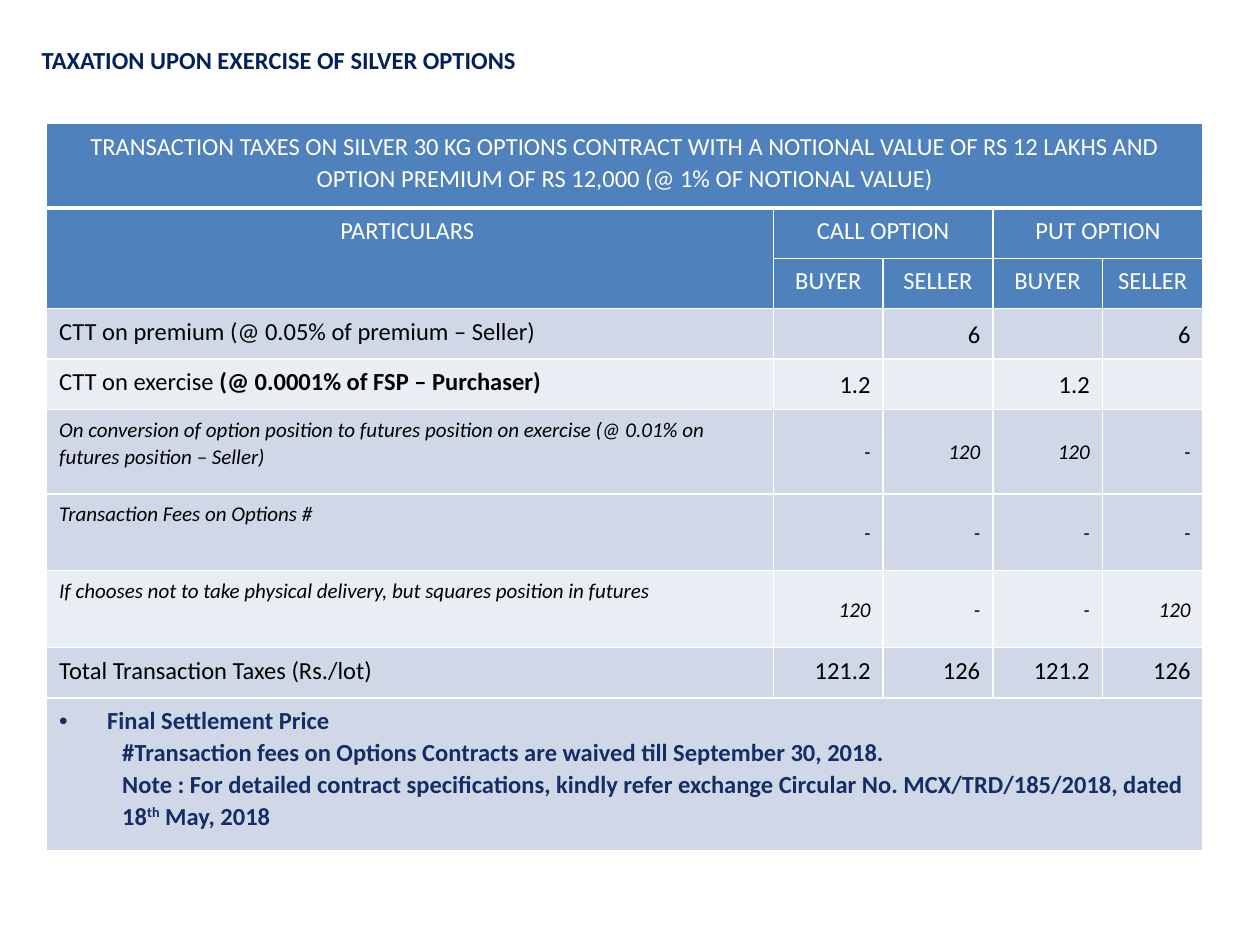
from lxml.etree import SubElement as Sub
from pptx import Presentation
from pptx.dml.color import RGBColor as RGB
from pptx.enum.text import MSO_ANCHOR as Anchor, PP_ALIGN as Align
from pptx.oxml.ns import qn
from pptx.util import Inches, Pt

COLORS = {"title": "002060", "head": "4F81BD", "band": "D0D8E8", "light": "E9EDF4",
          "white": "FFFFFF", "text": "000000", "note": "152D65"}
WIDTHS = [5.77, 0.87, 0.87, 0.87, 0.8]
HEIGHTS = [0.67, 0.4, 0.4, 0.4, 0.4, 0.67, 0.61, 0.61, 0.4, 1.21]
FILLS = ["head"] * 3 + ["band", "light", "band", "band", "light", "band", "band"]
TOP, BODY, LAST = 0, 3, 9

# Merged areas: first row, first column, last row, last column
SPANS = [(0, 0, 0, 4), (1, 0, 2, 0), (1, 1, 1, 2), (1, 3, 1, 4), (9, 0, 9, 4)]

HEADS = [
    (0, 0, "TRANSACTION TAXES ON SILVER 30 KG OPTIONS CONTRACT WITH A NOTIONAL VALUE "
           "OF RS 12 LAKHS AND OPTION PREMIUM OF RS 12,000 (@ 1% OF NOTIONAL VALUE)"),
    (1, 0, "PARTICULARS "), (1, 1, "CALL OPTION"), (1, 3, "PUT OPTION"),
    (2, 1, "BUYER"), (2, 2, "SELLER"), (2, 3, "BUYER"), (2, 4, "SELLER"),
]

# Label runs (text, style), size, italic, values
ROWS = [
    ([("CTT on premium (@ 0.05% of premium – Seller)", "")], 14, False, ["", "6", "", "6"]),
    ([("CTT on exercise ", ""), ("(@ 0.0001% of FSP – Purchaser)", "bold")], 14, False,
     ["1.2", "", "1.2", ""]),
    ([("On conversion of option position to futures position on exercise "
       "(@ 0.01% on futures position – Seller)", "")], 12, True, ["-", "120", "120", "-"]),
    ([("Transaction Fees on Options #", "")], 12, True, ["-"] * 4),
    ([("If chooses not to take physical delivery, but squares position in futures", "")],
     12, True, ["120", "-", "-", "120"]),
    ([("Total Transaction Taxes (Rs./lot)", "")], 14, False, ["121.2", "126", "121.2", "126"]),
]

# Note runs, left margin, first-line indent, bullet, space after
NOTES = [
    ([("Final Settlement Price", "")], 0.38, -0.38, "•", 0),
    ([("#Transaction fees on Options Contracts are waived till September 30, 2018.", "")],
     0.5, 0, "", 0),
    ([("Note : For detailed contract specifications, kindly refer exchange Circular No. "
       "MCX/TRD/185/2018, dated 18", ""), ("th", "super"), (" May, 2018", "")], 0.5, 0, "", 8),
]


class Deck:
    face = "Calibri"

    def __init__(self):
        self.prs = Presentation()
        self.prs.slide_width, self.prs.slide_height = Inches(10), Inches(7.5)
        self.slide = self.prs.slides.add_slide(self.prs.slide_layouts[5])

    def font(self, para, size, color, bold=False, italic=False):
        font = para.font
        font.name, font.size = self.face, Pt(size)
        font.bold, font.italic = bold, italic
        font.color.rgb = RGB.from_string(COLORS[color])

    def title(self, text, x, y, w, h):
        box = self.slide.shapes.title
        box.left, box.top, box.width, box.height = map(Inches, (x, y, w, h))
        frame = box.text_frame
        frame.text, frame.vertical_anchor = text, Anchor.TOP
        para = frame.paragraphs[0]
        para.alignment = Align.LEFT
        self.font(para, 14, "title", bold=True)

    def table(self, x, y, widths, heights, fills, spans):
        grid = self.slide.shapes.add_table(
            len(heights), len(widths), Inches(x), Inches(y),
            Inches(sum(widths)), Inches(sum(heights))).table
        grid.first_row = grid.horz_banding = False
        for col, width in zip(grid.columns, widths):
            col.width = Inches(width)
        for r, height in enumerate(heights):
            grid.rows[r].height = Inches(height)
            for c in range(len(widths)):
                cell = grid.cell(r, c)
                self.edges(cell, 3 if r == TOP + 1 else 1, 3 if r == TOP else 1)
                cell.fill.solid()
                cell.fill.fore_color.rgb = RGB.from_string(COLORS[fills[r]])
        for r, c, low, right in spans:
            grid.cell(r, c).merge(grid.cell(low, right))
        return grid

    def edges(self, cell, top, bottom):
        props = cell._tc.get_or_add_tcPr()
        for side, width in zip("LRTB", (1, 1, top, bottom)):
            line = Sub(props, qn("a:ln" + side), w=str(Pt(width)))
            Sub(Sub(line, qn("a:solidFill")), qn("a:srgbClr"), val=COLORS["white"])

    def bullet(self, para, left, first, mark):
        props = para._p.get_or_add_pPr()
        props.set("marL", str(Inches(left)))
        props.set("indent", str(Inches(first)))
        if mark:
            Sub(props, qn("a:buFont"), typeface="Arial")
            Sub(props, qn("a:buChar"), char=mark)

    def label(self, para, runs, size, color, align=Align.LEFT, after=8, **style):
        para.alignment, para.line_spacing, para.space_after = align, 1.07, Pt(after)
        self.font(para, size, color, **style)
        for text, kind in runs:
            run = para.add_run()
            run.text = text
            if kind == "bold":
                run.font.bold = True
            elif kind == "super":
                run._r.get_or_add_rPr().set("baseline", "30000")


def main():
    deck = Deck()
    deck.title("TAXATION UPON EXERCISE OF SILVER OPTIONS", 0.23, 0.31, 7.24, 0.55)
    grid = deck.table(0.37, 0.98, WIDTHS, HEIGHTS, FILLS, SPANS)

    # Header rows
    for r, c, text in HEADS:
        deck.label(grid.cell(r, c).text_frame.paragraphs[0], [(text, "")], 14, "white",
                   Align.CENTER)

    # Tax rows; the totals stay at the top of their cells
    for r, (name, size, italic, values) in enumerate(ROWS, BODY):
        deck.label(grid.cell(r, 0).text_frame.paragraphs[0], name, size, "text", italic=italic)
        for c, value in enumerate(values, 1):
            cell = grid.cell(r, c)
            if r < LAST - 1:
                cell.vertical_anchor = Anchor.MIDDLE
            runs = [(value, "")] if value else []
            deck.label(cell.text_frame.paragraphs[0], runs, size, "text", Align.RIGHT,
                       italic=italic)

    # Notes
    frame = grid.cell(LAST, 0).text_frame
    for i, (runs, left, first, mark, after) in enumerate(NOTES):
        para = frame.add_paragraph() if i else frame.paragraphs[0]
        deck.bullet(para, left, first, mark)
        deck.label(para, runs, 14, "note", after=after, bold=True)

    deck.prs.save("out.pptx")


if __name__ == "__main__":
    main()
